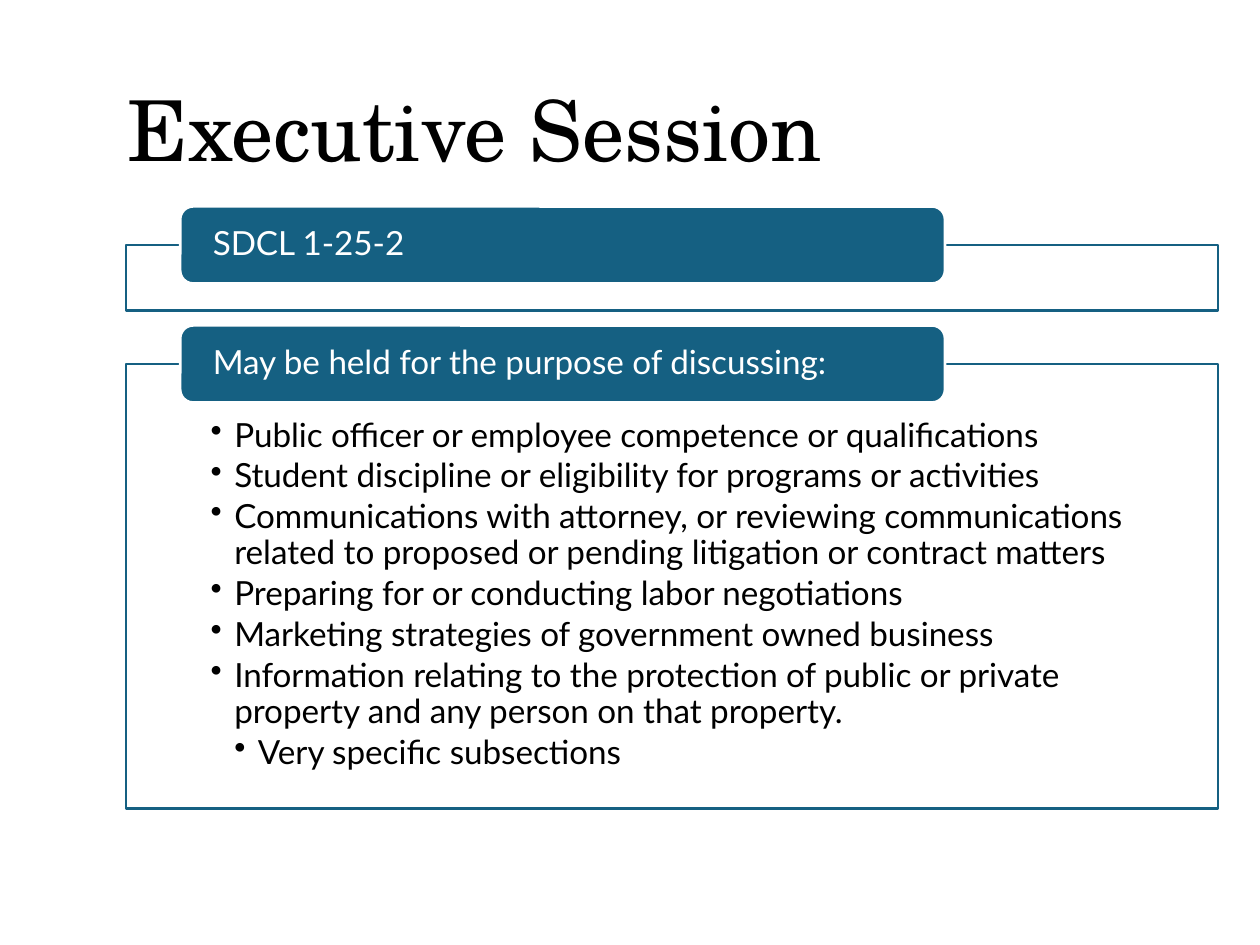
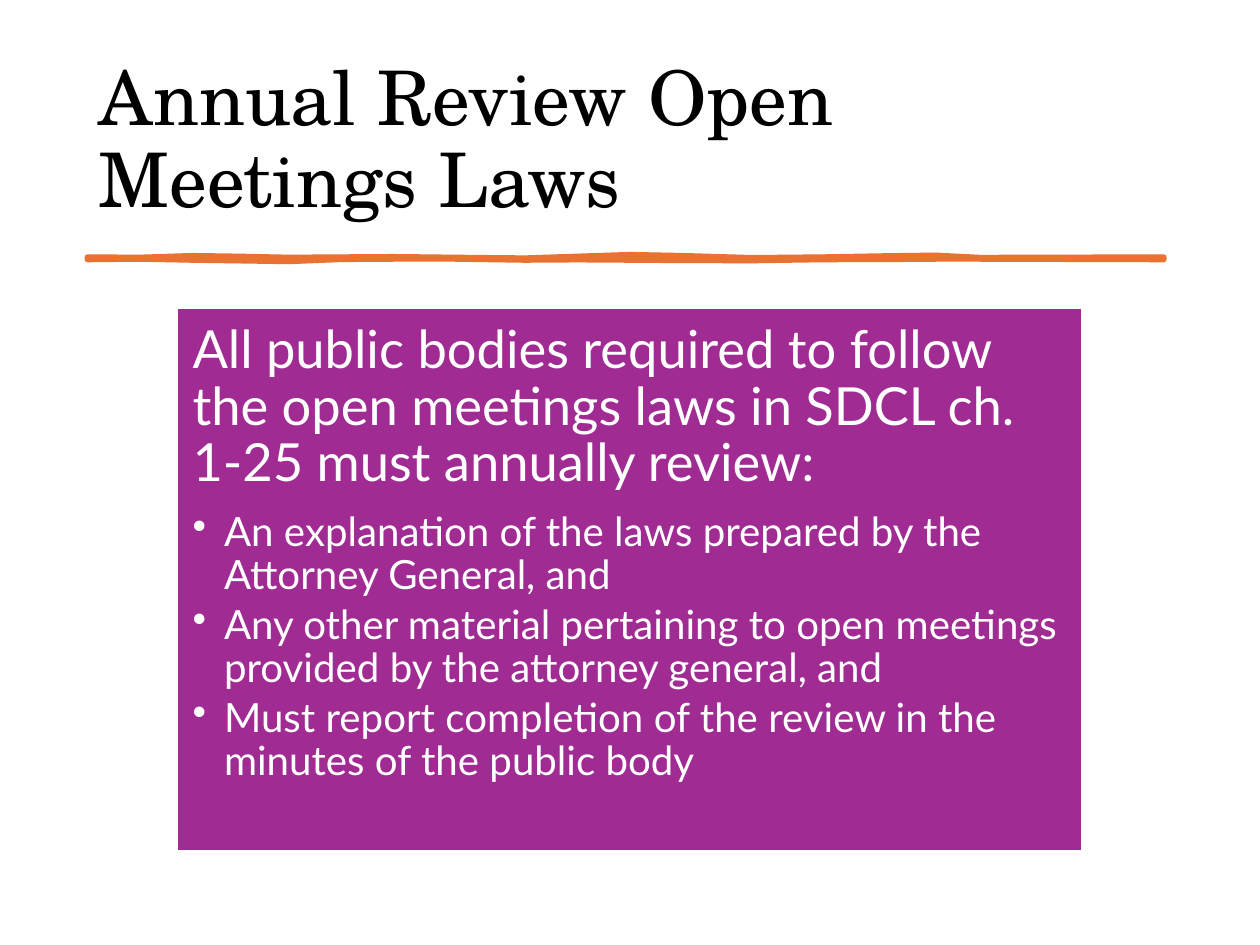
import pptx
import pptx.util
import pptx.dml.color
import pptx.enum.shapes
import pptx.enum.text
import pptx.oxml
import pptx.oxml.ns

Pt = pptx.util.Pt
RGBColor = pptx.dml.color.RGBColor
MSO_SHAPE = pptx.enum.shapes.MSO_SHAPE
ANCHOR = pptx.enum.text.MSO_ANCHOR
ALIGN = pptx.enum.text.PP_ALIGN

BLACK = RGBColor(0x00, 0x00, 0x00)
WHITE = RGBColor(0xFF, 0xFF, 0xFF)
TEAL = RGBColor(0x15, 0x60, 0x82)
ORANGE = RGBColor(0xE9, 0x71, 0x32)
PURPLE = RGBColor(0xA0, 0x2B, 0x93)

TITLE_FONT = "TeX Gyre Schola"
BODY_FONT = "Lato"
LINE_SPACING = 0.9
HEADING_GAP = 0.35  # space after, as a share of the text size
BULLET_GAP = 0.15

FRAME_LEFT, FRAME_WIDTH = 72, 624
TAB_LEFT, TAB_WIDTH, TAB_HEIGHT = 103, 437, 44
SESSION_SIZE = 19

SESSION_TOPICS = [
    ("Public officer or employee competence or qualifications", 1),
    ("Student discipline or eligibility for programs or activities", 1),
    ("Communications with attorney, or reviewing communications "
     "related to proposed or pending litigation or contract matters", 1),
    ("Preparing for or conducting labor negotiations", 1),
    ("Marketing strategies of government owned business", 1),
    ("Information relating to the protection of public or private "
     "property and any person on that property.", 1),
    ("Very specific subsections", 2),
]
REVIEW_HEADING = ("All public bodies required to follow the open meetings laws "
                  "in SDCL ch. 1-25 must annually review:")
REVIEW_DUTIES = [
    "An explanation of the laws prepared by the Attorney General, and",
    "Any other material pertaining to open meetings provided by the "
    "attorney general, and",
    "Must report completion of the review in the minutes of the public body",
]
# x, upper edge and lower edge of the hand-drawn rule
BRUSH_STROKE = [
    (50, 147, 148.3), (80, 147.2, 148), (110, 146.2, 148.6),
    (137, 146.6, 149), (165, 147.2, 149.4), (195, 147, 148.2),
    (225, 146.8, 148), (260, 147.2, 148), (300, 147.6, 148.6),
    (330, 146.6, 148.4), (360, 145.6, 148.6), (390, 146.2, 148.8),
    (430, 147.4, 148.9), (470, 147, 148.3), (510, 146.3, 148.2),
    (535, 146, 148), (560, 147.3, 148), (665, 147, 148.3),
]


def set_text_frame(tf, insets, anchor):
    tf.word_wrap = True
    tf.vertical_anchor = anchor
    (tf.margin_left, tf.margin_top,
     tf.margin_right, tf.margin_bottom) = [Pt(v) for v in insets]


def add_paragraph(tf, text, size, color, font=BODY_FONT, gap=0.0):
    """Fill the empty first paragraph of the frame, or append a new one."""
    p = tf.paragraphs[0] if not tf.text else tf.add_paragraph()
    p.text = text
    p.alignment = ALIGN.LEFT
    p.line_spacing = LINE_SPACING
    p.space_after = Pt(gap * size)
    for r in p.runs:
        r.font.name = font
        r.font.size = Pt(size)
        r.font.color.rgb = color
    return p


def add_bullet(tf, text, size, color, indent, level=1):
    p = add_paragraph(tf, text, size, color, gap=BULLET_GAP)
    p.level = level
    pPr = p._p.get_or_add_pPr()
    pPr.set("marL", str(Pt(indent * level)))
    pPr.set("indent", str(-Pt(indent)))
    pPr.append(pptx.oxml.parse_xml(
        f'<a:buChar {pptx.oxml.ns.nsdecls("a")} char="•"/>'))


def add_title(s, text, size, left, top, width, height):
    tf = s.shapes.add_textbox(Pt(left), Pt(top), Pt(width), Pt(height)).text_frame
    set_text_frame(tf, (7.2, 3.6, 7.2, 3.6), ANCHOR.MIDDLE)
    add_paragraph(tf, text, size, BLACK, TITLE_FONT)


def style_shape(sp, fill, line, line_width=1.5):
    sp.shadow.inherit = False
    sp.fill.solid()
    sp.fill.fore_color.rgb = fill
    sp.line.color.rgb = line
    sp.line.width = Pt(line_width)


def add_panel(s, kind, left, top, width, height, fill, line):
    sp = s.shapes.add_shape(kind, Pt(left), Pt(top), Pt(width), Pt(height))
    style_shape(sp, fill, line)
    return sp


def add_section(s, heading, top, height, topics=()):
    """Outlined frame with a heading tab centred on its top edge."""
    frame = add_panel(s, MSO_SHAPE.RECTANGLE, FRAME_LEFT, top, FRAME_WIDTH,
                      height, WHITE, TEAL)
    set_text_frame(frame.text_frame, (48.4, 31, 48.4, 10.8), ANCHOR.TOP)
    for text, level in topics:
        add_bullet(frame.text_frame, text, SESSION_SIZE, BLACK, 13.5, level)
    tab = add_panel(s, MSO_SHAPE.ROUNDED_RECTANGLE, TAB_LEFT,
                    top - TAB_HEIGHT / 2, TAB_WIDTH, TAB_HEIGHT, TEAL, WHITE)
    set_text_frame(tab.text_frame, (16.5, 0, 16.5, 0), ANCHOR.MIDDLE)
    add_paragraph(tab.text_frame, heading, SESSION_SIZE, WHITE)


def add_brush_stroke(s):
    upper = [(Pt(x), Pt(y)) for x, y, _ in BRUSH_STROKE]
    lower = [(Pt(x), Pt(y)) for x, _, y in reversed(BRUSH_STROKE)]
    builder = s.shapes.build_freeform(*upper[0])
    builder.add_line_segments(upper[1:] + lower, close=True)
    style_shape(builder.convert_to_shape(), ORANGE, ORANGE, 3.25)


def build_executive_session(s):
    add_title(s, "Executive Session", 48, 66, 48, 624, 57.6)
    add_section(s, "SDCL 1-25-2", 140, 37.5)
    add_section(s, "May be held for the purpose of discussing:", 208, 254,
                SESSION_TOPICS)


def build_annual_review(s):
    add_title(s, "Annual Review Open Meetings Laws", 43, 49.5, 29, 620.5, 104.4)
    add_brush_stroke(s)
    panel = add_panel(s, MSO_SHAPE.RECTANGLE, 101, 175.7, 517.7, 311, PURPLE, WHITE)
    tf = panel.text_frame
    set_text_frame(tf, (9, 9, 9, 9), ANCHOR.TOP)
    add_paragraph(tf, REVIEW_HEADING, 30, WHITE, gap=HEADING_GAP)
    for duty in REVIEW_DUTIES:
        add_bullet(tf, duty, 23, WHITE, 18)


def main():
    prs = pptx.Presentation()
    prs.slide_width, prs.slide_height = Pt(720), Pt(540)
    for build in (build_executive_session, build_annual_review):
        build(prs.slides.add_slide(prs.slide_layouts[6]))
    prs.save("out.pptx")


if __name__ == "__main__":
    main()
